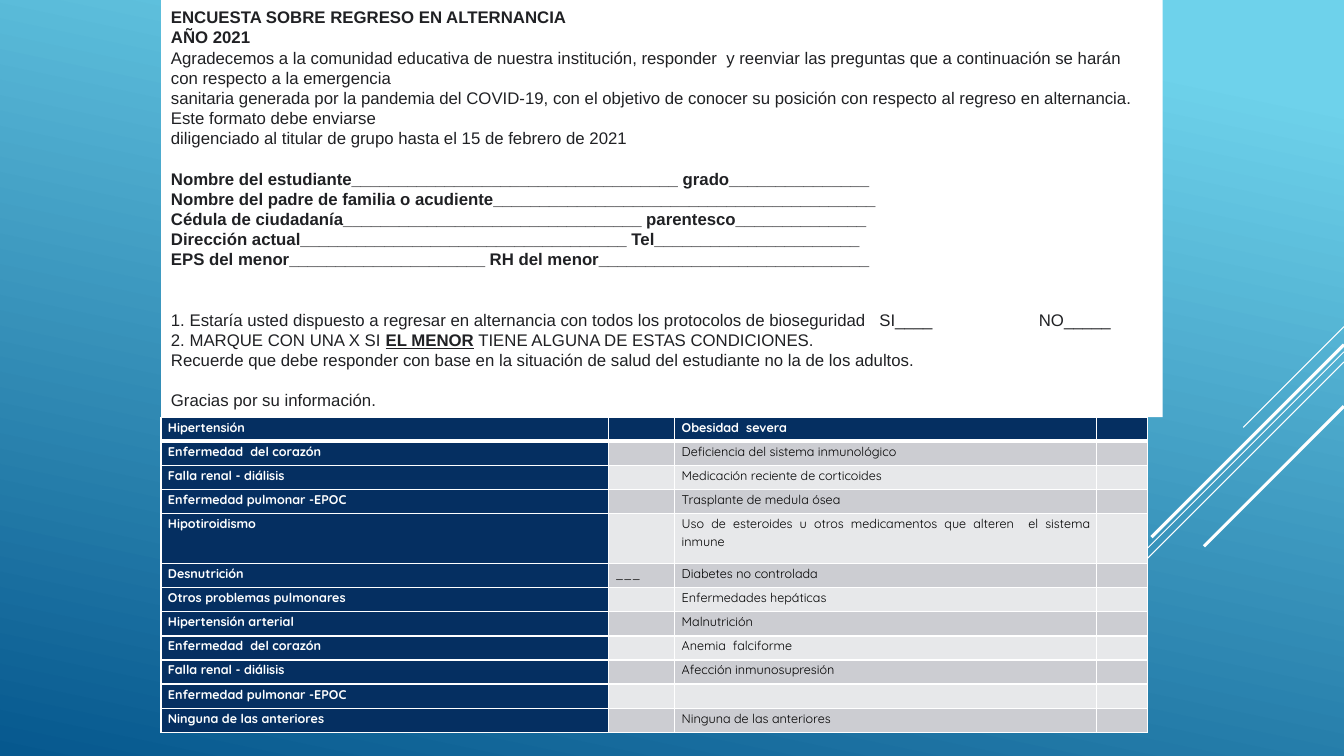
from lxml.etree import SubElement
from pptx import Presentation
from pptx.dml.color import RGBColor
from pptx.enum.shapes import MSO_CONNECTOR as Connector, MSO_SHAPE as Shape
from pptx.enum.text import MSO_ANCHOR as Anchor, PP_ALIGN as Align
from pptx.oxml.ns import qn
from pptx.util import Pt

WHITE, NAVY, INK, BLACK = "FFFFFF", "052F61", "202124", "000000"
BANDS = "E7E8EA", "CCCDD2"
LINE = 14.4  # height of one line of the survey text


def color(value):
    return RGBColor.from_string(value)


class SurveySlide:
    """Holds the style and the current slide."""

    def __init__(self, deck):
        self.slide = deck.slides.add_slide(deck.slide_layouts[6])
        self.body = dict(name="Arial", size=Pt(12))
        self.cell = dict(name="Quicksand", size=Pt(9))

    def background(self, start, end, angle):
        fill = self.slide.background.fill
        fill.gradient()
        fill.gradient_angle = angle
        for stop, (position, value) in zip(fill.gradient_stops, (start, end)):
            stop.position = position
            stop.color.rgb = color(value)

    def run(self, paragraph, text, ink, **style):
        run = paragraph.add_run()
        run.text = text
        for key, value in style.items():
            setattr(run.font, key, value)
        run.font.color.rgb = color(ink)

    def line(self, x1, y1, x2, y2, width):
        line = self.slide.shapes.add_connector(
            Connector.STRAIGHT, Pt(x1), Pt(y1), Pt(x2), Pt(y2))
        line.line.color.rgb = color(WHITE)
        line.line.width = Pt(width)
        SubElement(line._element.spPr, qn("a:effectLst"))

    def panel(self, left, top, width, height, paragraphs):
        panel = self.slide.shapes.add_shape(
            Shape.RECTANGLE, Pt(left), Pt(top), Pt(width), Pt(height))
        panel.shadow.inherit = False
        panel.fill.solid()
        panel.fill.fore_color.rgb = color(WHITE)
        panel.line.fill.background()
        frame = panel.text_frame
        frame.word_wrap = True
        frame.vertical_anchor = Anchor.MIDDLE
        for index, (runs, gap, tabs) in enumerate(paragraphs):
            paragraph = frame.add_paragraph() if index else frame.paragraphs[0]
            layout = dict(alignment=Align.LEFT, line_spacing=Pt(LINE),
                          space_after=Pt(gap * LINE))
            for key, value in layout.items():
                setattr(paragraph, key, value)
            if tabs:
                stops = SubElement(paragraph._p.get_or_add_pPr(), qn("a:tabLst"))
                for tab in tabs:
                    SubElement(stops, qn("a:tab"), pos=str(Pt(tab)), algn="l")
            for text, style in runs:
                self.run(paragraph, text, INK, **self.body, **style)

    def table(self, left, top, widths, heights, rows):
        table = self.slide.shapes.add_table(
            len(rows), len(widths), Pt(left), Pt(top),
            Pt(sum(widths)), Pt(sum(heights))).table
        for column, width in zip(table.columns, widths):
            column.width = Pt(width)
        for r, (row, height) in enumerate(zip(rows, heights)):
            table.rows[r].height = Pt(height)
            for c, text in enumerate(row):
                heading = r == 0 or c == 0
                bottom = 3 if r == 0 else 1
                top_edge = 3 if r == 1 else 1
                self.table_cell(table.cell(r, c), text, heading,
                                NAVY if heading else BANDS[r % 2],
                                dict(L=1, R=1, T=top_edge, B=bottom))

    def table_cell(self, cell, text, heading, fill, borders):
        for key, value in dict(margin_left=5, margin_right=5,
                               margin_top=0, margin_bottom=0).items():
            setattr(cell, key, Pt(value))
        properties = cell._tc.get_or_add_tcPr()
        for side, width in borders.items():
            edge = SubElement(properties, qn(f"a:ln{side}"), w=str(Pt(width)))
            SubElement(SubElement(edge, qn("a:solidFill")), qn("a:srgbClr"), val=WHITE)
        cell.fill.solid()
        cell.fill.fore_color.rgb = color(fill)
        paragraph = cell.text_frame.paragraphs[0]
        for key, value in dict(alignment=Align.JUSTIFY, line_spacing=1.15,
                               space_after=Pt(10)).items():
            setattr(paragraph, key, value)
        if text:
            self.run(paragraph, text, WHITE if heading else BLACK,
                     bold=heading, **self.cell)
        else:
            # Keeps an empty cell as low as the others
            SubElement(paragraph._p, qn("a:endParaRPr"), sz="900")


def entry(text, bold=False, gap=0, tabs=()):
    return [(text, dict(bold=bold))], gap, tabs


# Survey text: runs, blank lines after, tab stops
SURVEY = [
    entry("ENCUESTA SOBRE REGRESO EN ALTERNANCIA", True),
    entry("AÑO 2021", True),
    entry("Agradecemos a la comunidad educativa de nuestra institución, responder  y "
          "reenviar las preguntas que a continuación se harán con respecto a la emergencia"),
    entry("sanitaria generada por la pandemia del COVID-19, con el objetivo de conocer su "
          "posición con respecto al regreso en alternancia. Este formato debe enviarse"),
    entry("diligenciado al titular de grupo hasta el 15 de febrero de 2021", gap=1),
    entry("Nombre del estudiante" + "_" * 35 + " grado" + "_" * 15, True),
    entry("Nombre del padre de familia o acudiente" + "_" * 41, True),
    entry("Cédula de ciudadanía" + "_" * 32 + " parentesco" + "_" * 14, True),
    entry("Dirección actual" + "_" * 35 + " Tel" + "_" * 22, True),
    entry("EPS del menor" + "_" * 21 + " RH del menor" + "_" * 29, True, gap=2),
    entry("1. Estaría usted dispuesto a regresar en alternancia con todos los protocolos "
          "de bioseguridad\tSI____\tNO_____", tabs=(506, 620)),
    ([("2. MARQUE CON UNA X SI ", {}),
      ("EL MENOR", dict(bold=True, underline=True)),
      (" TIENE ALGUNA DE ESTAS CONDICIONES.", {})], 0, ()),
    entry("Recuerde que debe responder con base en la situación de salud del estudiante "
          "no la de los adultos.", gap=1),
    entry("Gracias por su información."),
]

# Health conditions, each followed by its box to mark
CONDITIONS = [
    ("Hipertensión", "", "Obesidad  severa", ""),
    ("Enfermedad  del corazón", "", "Deficiencia del sistema inmunológico", ""),
    ("Falla renal - diálisis", "", "Medicación reciente de corticoides", ""),
    ("Enfermedad pulmonar -EPOC", "", "Trasplante de medula ósea", ""),
    ("Hipotiroidismo", "",
     "Uso de esteroides u otros medicamentos que alteren  el sistema inmune", ""),
    ("Desnutrición", "___", "Diabetes no controlada", ""),
    ("Otros problemas pulmonares", "", "Enfermedades hepáticas", ""),
    ("Hipertensión arterial", "", "Malnutrición", ""),
    ("Enfermedad  del corazón", "", "Anemia  falciforme", ""),
    ("Falla renal - diálisis", "", "Afección inmunosupresión", ""),
    ("Enfermedad pulmonar -EPOC", "", "", ""),
    ("Ninguna de las anteriores", "", "Ninguna de las anteriores", ""),
]

# Diagonals from the right edge: start height, run, line width
DIAGONALS = [(233.3, 72, 0.75), (251.3, 234.7, 0.75), (258.5, 149.5, 0.75),
             (246.2, 137.5, 2.25), (290.2, 100, 2.25)]


def main():
    deck = Presentation()
    deck.slide_width, deck.slide_height = Pt(960), Pt(540)
    survey = SurveySlide(deck)

    # Backdrop
    survey.background((0.1, "6ED2EB"), (1, "06588E"), 258)
    for start, reach, width in DIAGONALS:
        survey.line(960, start, 960 - reach, start + reach, width)

    # Conditions table, then the survey text
    heights = [36 if row[0] == "Hipotiroidismo" else 17.2 for row in CONDITIONS]
    survey.table(115, 298, (319.5, 47.5, 301.5, 36), heights, CONDITIONS)
    survey.panel(115, 0, 715.5, 298, SURVEY)

    deck.save("out.pptx")


if __name__ == "__main__":
    main()
